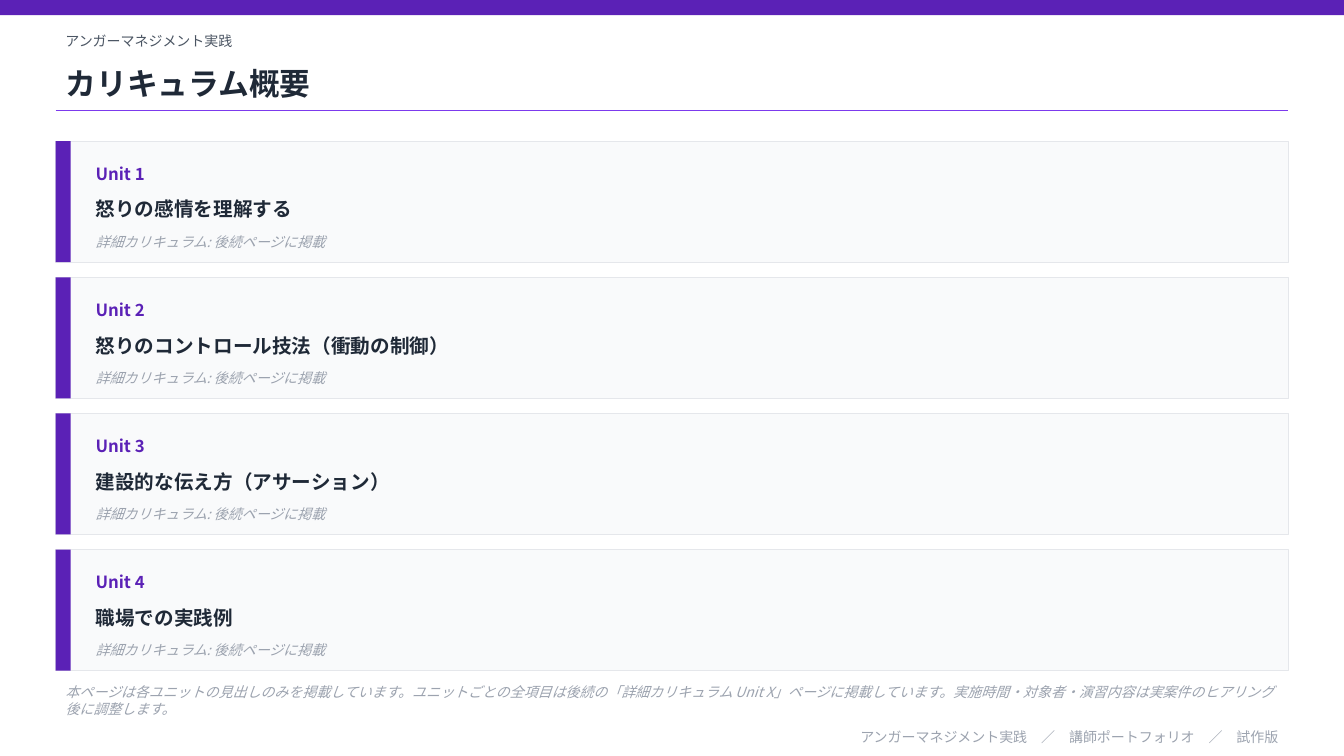
from lxml.etree import SubElement
from pptx import Presentation
from pptx.dml.color import RGBColor
from pptx.enum.shapes import MSO_CONNECTOR, MSO_SHAPE
from pptx.enum.text import MSO_ANCHOR, MSO_AUTO_SIZE, PP_ALIGN
from pptx.oxml.ns import qn
from pptx.util import Cm, Pt

FONT = "Noto Sans CJK JP"
COLORS = {
    "purple": "5B21B6",
    "violet": "7C3AED",
    "ink": "1F2937",
    "slate": "4B5563",
    "muted": "9CA3AF",
    "card": "F9FAFB",
    "border": "E5E7EB",
}
PAGE_WIDTH, PAGE_HEIGHT = 33.87, 19.05
MARGIN, CONTENT_WIDTH = 1.4, 31.06
BAR = 0.38
CARD_TOP, CARD_HEIGHT, CARD_PITCH = 3.56, 3.05, 3.43
UNITS = [
    "怒りの感情を理解する",
    "怒りのコントロール技法（衝動の制御）",
    "建設的な伝え方（アサーション）",
    "職場での実践例",
]
UNIT_NOTE = "詳細カリキュラム: 後続ページに掲載"
PAGE_NOTE = (
    "本ページは各ユニットの見出しのみを掲載しています。"
    "ユニットごとの全項目は後続の「詳細カリキュラム Unit X」ページに掲載しています。"
    "実施時間・対象者・演習内容は実案件のヒアリング後に調整します。"
)
FOOTER = "アンガーマネジメント実践　／　講師ポートフォリオ　／　試作版"


def color(name):
    return RGBColor.from_string(COLORS[name])


def write(box, text, size, color_name, bold=False, italic=False, align=PP_ALIGN.LEFT):
    """Fill a text box or placeholder with one formatted paragraph."""
    frame = box.text_frame
    frame.word_wrap = True
    frame.auto_size = MSO_AUTO_SIZE.NONE
    frame.vertical_anchor = MSO_ANCHOR.MIDDLE
    para = frame.paragraphs[0]
    para.alignment = align
    span = para.add_run()
    span.text = text
    font = span.font
    font.name = FONT
    font.size = Pt(size)
    font.bold = bold
    font.italic = italic
    font.color.rgb = color(color_name)
    SubElement(font._element, qn("a:ea"), typeface=FONT)


def add_text(page, left, top, width, height, *content, **style):
    box = page.shapes.add_textbox(Cm(left), Cm(top), Cm(width), Cm(height))
    write(box, *content, **style)


def add_block(page, left, top, width, height, fill, border=None):
    block = page.shapes.add_shape(
        MSO_SHAPE.RECTANGLE, Cm(left), Cm(top), Cm(width), Cm(height))
    block.shadow.inherit = False
    block.fill.solid()
    block.fill.fore_color.rgb = color(fill)
    if border:
        block.line.color.rgb = color(border)
        block.line.width = Pt(0.5)
    else:
        block.line.fill.background()


def add_rule(page, top):
    rule = page.shapes.add_connector(
        MSO_CONNECTOR.STRAIGHT,
        Cm(MARGIN), Cm(top), Cm(MARGIN + CONTENT_WIDTH), Cm(top))
    rule.line.color.rgb = color("violet")
    rule.line.width = Pt(1)
    SubElement(rule._element.spPr, qn("a:effectLst"))


def add_title(page, text):
    title = page.shapes.title
    title.left, title.top = Cm(MARGIN), Cm(1.4)
    title.width, title.height = Cm(CONTENT_WIDTH), Cm(1.4)
    write(title, text, 22, "ink", bold=True)


def add_unit_card(page, index, heading):
    top = CARD_TOP + index * CARD_PITCH
    left, width = 2.16, 29.79
    add_block(page, MARGIN, top, CONTENT_WIDTH, CARD_HEIGHT, "card", "border")
    add_block(page, MARGIN, top, BAR, CARD_HEIGHT, "purple")
    add_text(page, left, top + 0.3, 3.81, 1.02,
             f"Unit {index + 1}", 12, "purple", bold=True)
    add_text(page, left, top + 1.14, width, 1.14, heading, 14, "ink", bold=True)
    add_text(page, left, top + 2.16, width, 0.76, UNIT_NOTE, 10, "muted", italic=True)


def main():
    deck = Presentation()
    deck.slide_width, deck.slide_height = Cm(PAGE_WIDTH), Cm(PAGE_HEIGHT)
    page = deck.slides.add_slide(deck.slide_layouts.get_by_name("Title Only"))

    add_block(page, 0, 0, PAGE_WIDTH, BAR, "purple")
    add_text(page, MARGIN, 0.64, CONTENT_WIDTH, 0.76,
             "アンガーマネジメント実践", 10, "slate")
    add_title(page, "カリキュラム概要")
    add_rule(page, 2.79)
    for index, heading in enumerate(UNITS):
        add_unit_card(page, index, heading)
    add_text(page, MARGIN, 17.15, CONTENT_WIDTH, 1.02,
             PAGE_NOTE, 10, "muted", italic=True)
    add_text(page, MARGIN, 18.29, CONTENT_WIDTH, 0.56,
             FOOTER, 10, "muted", align=PP_ALIGN.RIGHT)
    deck.save("out.pptx")


if __name__ == "__main__":
    main()
